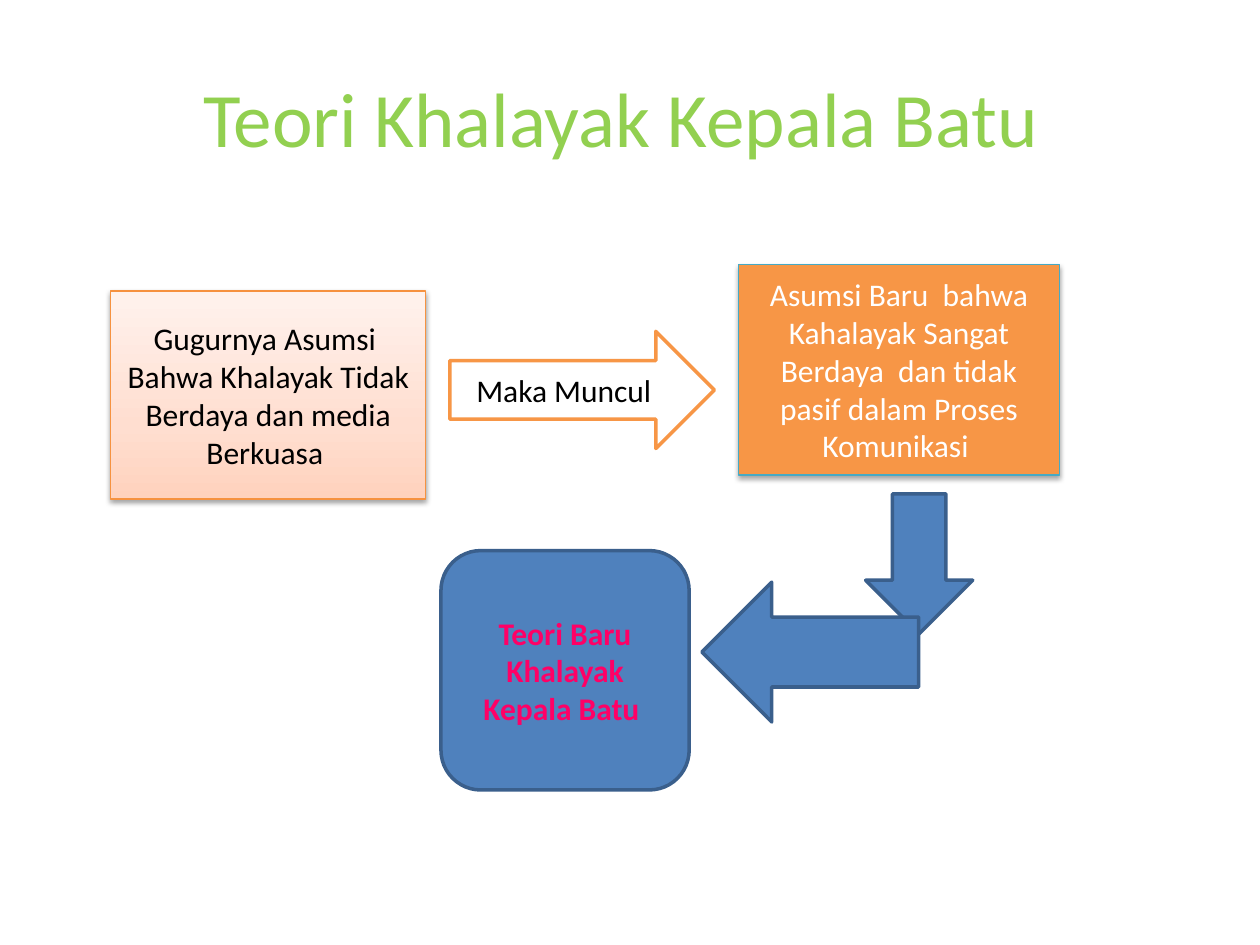
from copy import deepcopy
from dataclasses import dataclass
from typing import Optional

from lxml import etree
from pptx import Presentation
from pptx.dml.color import RGBColor
from pptx.enum.shapes import MSO_SHAPE as Shape
from pptx.enum.text import MSO_ANCHOR, PP_ALIGN
from pptx.oxml.ns import qn
from pptx.util import Inches, Pt

COLORS = {
    "title": "92D050",
    "black": "000000",
    "white": "FFFFFF",
    "orange": "F79646",
    "orange_edge": "F69240",
    "teal_edge": "46AAC5",
    "blue": "4F81BD",
    "blue_edge": "3A5F8C",
    "pink": "FF0066",
}
PEACH = ((0, "FFD2BD"), (0.35, "FFDED0"), (1, "FFF2ED"))


@dataclass
class Shadow:
    opacity: int  # percent
    distance: float  # points
    blur: float = 3.1


@dataclass
class Block:
    kind: Shape
    at: tuple[float, float, float, float]
    fill: Optional[str]  # None gives the peach gradient
    line: str
    width: float = 2
    text: str = ""
    color: str = "black"
    bold: bool = False
    shadow: Optional[Shadow] = None


BLOCKS = [
    Block(Shape.RECTANGLE, (0.88, 2.31, 2.5, 1.65), None, "orange_edge", 0.75,
          "Gugurnya Asumsi  Bahwa Khalayak Tidak Berdaya dan media Berkuasa ",
          shadow=Shadow(38, 1.6)),
    Block(Shape.RIGHT_ARROW, (3.57, 2.63, 2.1, 0.93), "white", "orange",
          text="Maka Muncul "),
    Block(Shape.RECTANGLE, (5.86, 2.1, 2.55, 1.67), "orange", "teal_edge", 0.75,
          "Asumsi Baru  bahwa Kahalayak Sangat Berdaya  dan tidak pasif dalam "
          "Proses Komunikasi ", "white", shadow=Shadow(35, 1.8)),
    Block(Shape.DOWN_ARROW, (6.87, 3.92, 0.85, 1.11), "blue", "blue_edge"),
    Block(Shape.LEFT_ARROW, (5.57, 4.62, 1.72, 1.11), "blue", "blue_edge"),
    Block(Shape.ROUNDED_RECTANGLE, (3.5, 4.37, 1.97, 1.9), "blue", "blue_edge",
          text="Teori Baru Khalayak Kepala Batu ", color="pink", bold=True),
]


def rgb(name: str) -> RGBColor:
    return RGBColor.from_string(COLORS[name])


def write(sp, text: str, size: float, color: str, bold: bool = False) -> None:
    tf = sp.text_frame
    tf.word_wrap = True
    tf.vertical_anchor = MSO_ANCHOR.MIDDLE
    p = tf.paragraphs[0]
    p.text = text
    p.alignment = PP_ALIGN.CENTER
    p.font.name = "Calibri"
    p.font.size = Pt(size)
    p.font.bold = bold
    p.font.color.rgb = rgb(color)


def fill_peach(sp) -> None:
    """Apply the three-stop gradient, running from bottom to top."""
    sp.fill.gradient()
    sp.fill.gradient_angle = 90
    stops = sp._element.spPr.find(".//" + qn("a:gsLst"))
    stops.insert(1, deepcopy(stops[0]))
    for stop, (position, color) in zip(sp.fill.gradient_stops, PEACH):
        stop.position = position
        stop.color.rgb = RGBColor.from_string(color)


def add_shadow(sp, shadow: Shadow) -> None:
    """Put a downward outer shadow in the shape's empty effect list."""
    effects = sp._element.spPr.find(qn("a:effectLst"))
    outer = etree.SubElement(
        effects, qn("a:outerShdw"), blurRad=str(Pt(shadow.blur)),
        dist=str(Pt(shadow.distance)), dir="5400000", rotWithShape="0")
    color = etree.SubElement(outer, qn("a:srgbClr"), val=COLORS["black"])
    etree.SubElement(color, qn("a:alpha"), val=str(shadow.opacity * 1000))


def add_block(slide, block: Block) -> None:
    sp = slide.shapes.add_shape(block.kind, *map(Inches, block.at))
    if block.fill:
        sp.fill.solid()
        sp.fill.fore_color.rgb = rgb(block.fill)
    else:
        fill_peach(sp)
    sp.line.color.rgb = rgb(block.line)
    sp.line.width = Pt(block.width)
    sp.shadow.inherit = False
    if block.shadow:
        add_shadow(sp, block.shadow)
    if block.text:
        write(sp, block.text, 18, block.color, block.bold)


def main() -> None:
    prs = Presentation()
    prs.slide_width, prs.slide_height = Inches(10), Inches(7.5)
    slide = prs.slides.add_slide(prs.slide_layouts[6])
    title = slide.shapes.add_textbox(*map(Inches, (0.5, 0.3, 9, 1.25)))
    write(title, "Teori Khalayak Kepala Batu ", 44, "title")
    for block in BLOCKS:
        add_block(slide, block)
    prs.save("out.pptx")


if __name__ == "__main__":
    main()
